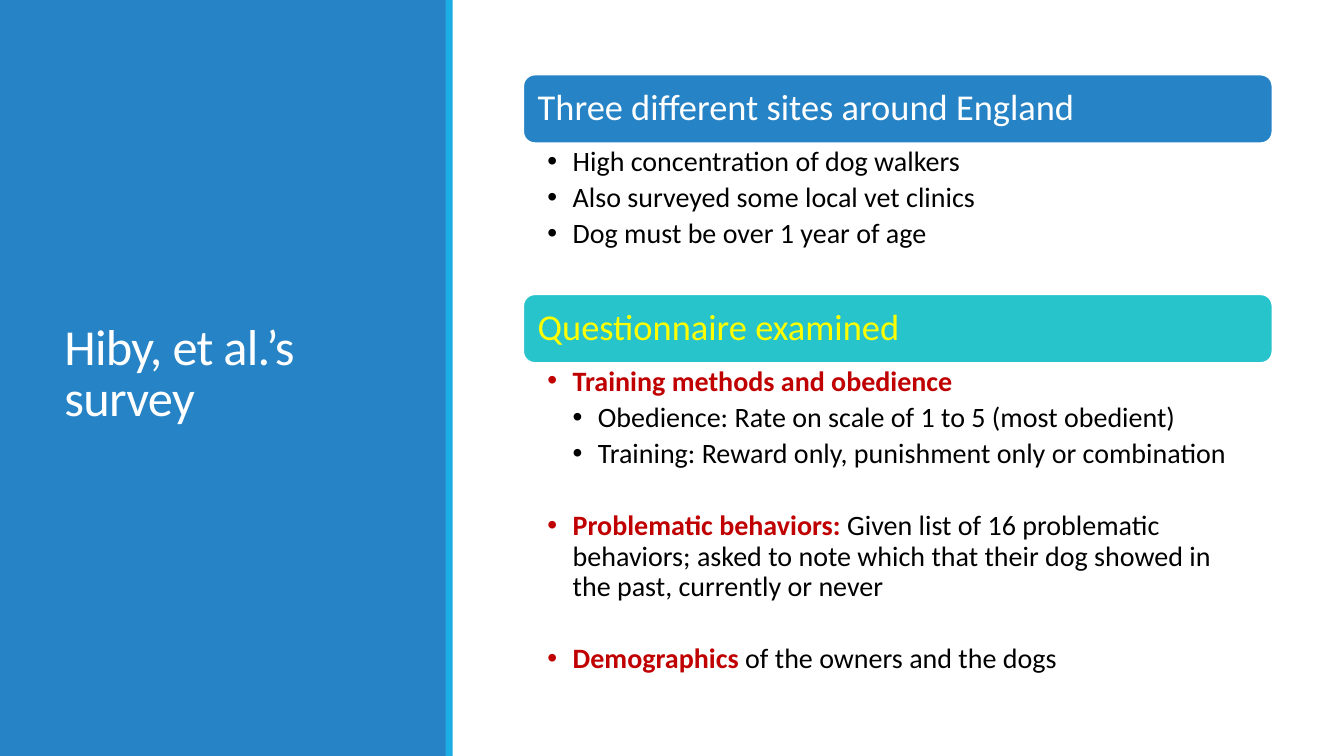
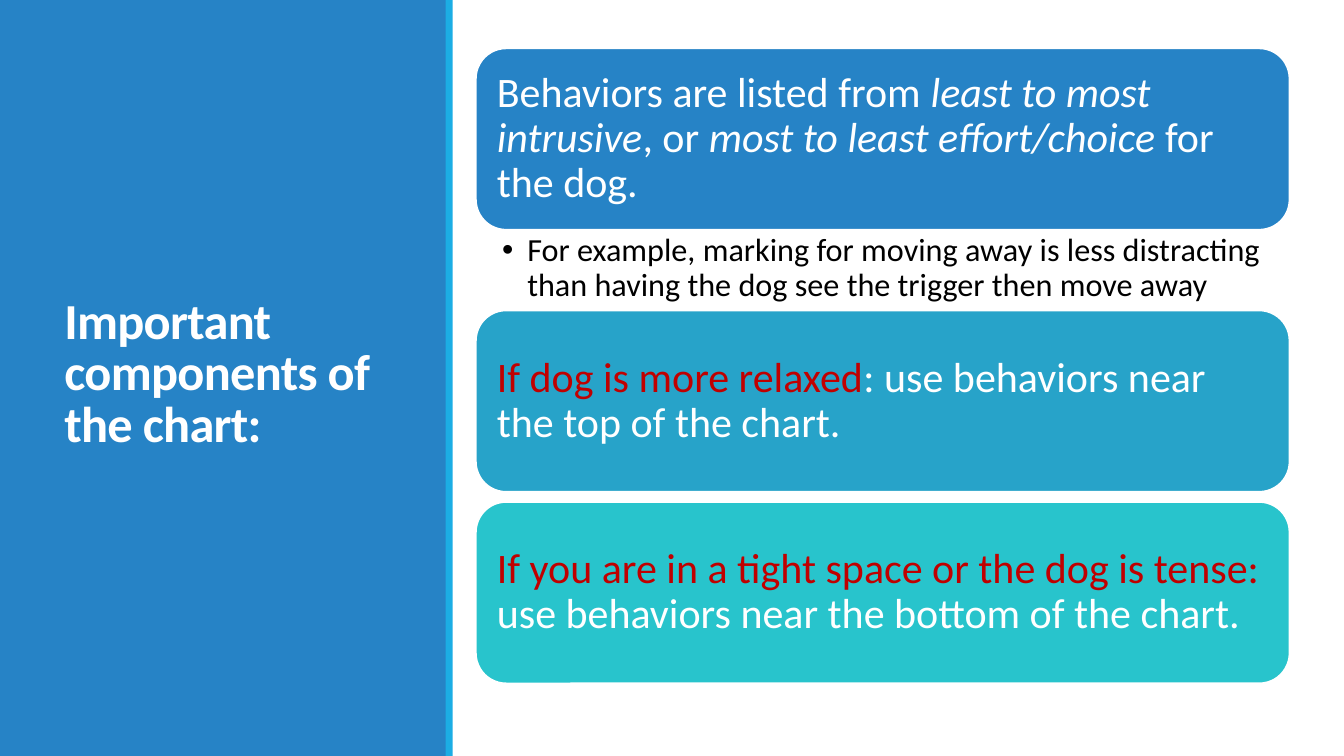
"""Build two slides with a title panel and rounded heading boxes."""
from lxml import etree
from pptx import Presentation
from pptx.dml.color import RGBColor
from pptx.enum.shapes import MSO_SHAPE
from pptx.enum.text import MSO_ANCHOR, PP_ALIGN
from pptx.oxml.ns import qn
from pptx.util import Inches, Pt

RECT = MSO_SHAPE.RECTANGLE
ROUND = MSO_SHAPE.ROUNDED_RECTANGLE
LEFT = PP_ALIGN.LEFT
TOP, MIDDLE = MSO_ANCHOR.TOP, MSO_ANCHOR.MIDDLE

COLORS = {
    "blue": "2683C6", "sky": "1CADE4", "ocean": "27A3C9", "teal": "28C4CC",
    "white": "FFFFFF", "black": "000000", "red": "C00000", "yellow": "FFFF00",
}
FONT = "Calibri"
KEY = {"color": "red", "bold": True}


def rgb(name):
    return RGBColor.from_string(COLORS[name])


def add_block(s, kind, box, fill, line=None):
    sp = s.shapes.add_shape(kind, *map(Inches, box))
    sp.shadow.inherit = False
    sp.fill.solid()
    sp.fill.fore_color.rgb = rgb(fill)
    if line:
        sp.line.color.rgb = rgb(line)
        sp.line.width = Pt(1.25)
    else:
        sp.line.fill.background()
    return sp


def set_frame(tf, anchor, insets):
    tf.word_wrap = True
    tf.vertical_anchor = anchor
    sides = ("margin_left", "margin_top", "margin_right", "margin_bottom")
    for side, inset in zip(sides, insets):
        setattr(tf, side, Inches(inset))


def write(p, runs, size, color, spacing=0.9):
    p.alignment = LEFT
    p.line_spacing = spacing
    for text, changes in runs:
        r = p.add_run()
        r.text = text
        style = {"name": FONT, "size": Pt(size), **changes}
        r.font.color.rgb = rgb(style.pop("color", color))
        for attr, value in style.items():
            setattr(r.font, attr, value)


def add_bullet(p, level):
    pPr = p._p.get_or_add_pPr()
    pPr.set("marL", str(Inches(0.25 * level)))
    pPr.set("indent", str(Inches(-0.25)))
    etree.SubElement(pPr, qn("a:buFont")).set("typeface", "Arial")
    etree.SubElement(pPr, qn("a:buChar")).set("char", "•")


def add_heading(s, box, fill, runs, size, inset, color="white"):
    tf = add_block(s, ROUND, box, fill, "white").text_frame
    set_frame(tf, MIDDLE, [inset] * 4)
    write(tf.paragraphs[0], runs, size, color)


def add_bullets(s, box, items, size, insets):
    tf = s.shapes.add_textbox(*map(Inches, box)).text_frame
    set_frame(tf, TOP, insets)
    for i, (level, gap, runs) in enumerate(items):
        p = tf.add_paragraph() if i else tf.paragraphs[0]
        write(p, runs, size, "black")
        p.space_before = Pt(gap)
        p.space_after = Pt(size * 0.215)
        add_bullet(p, level)


def add_titled_slide(prs, title, bold=False):
    s = prs.slides.add_slide(prs.slide_layouts[6])
    add_block(s, RECT, (0, 0, 4.43, 7.5), "blue")
    add_block(s, RECT, (4.42, 0, 0.07, 7.5), "sky")
    tf = s.shapes.add_textbox(*map(Inches, (0.54, 0.57, 3.37, 6.31))).text_frame
    set_frame(tf, MIDDLE, (0.1, 0.05, 0.1, 0.05))
    p = tf.paragraphs[0]
    write(p, [(title, {"bold": bold})], 36, "white", 0.85)
    p.runs[0].font._element.set("spc", "-50")
    return s


def add_survey_slide(prs):
    s = add_titled_slide(prs, "Hiby, et al.’s survey")
    sites = [
        (1, 0, [("High concentration of dog walkers", {})]),
        (1, 0, [("Also surveyed some local vet clinics", {})]),
        (1, 0, [("Dog must be over 1 year of age", {})]),
    ]
    questions = [
        (1, 0, [("Training methods and obedience", KEY)]),
        (2, 0, [("Obedience: Rate on scale of 1 to 5 (most obedient)", {})]),
        (2, 0, [("Training: Reward only, punishment only or combination", {})]),
        (1, 25.7, [("Problematic behaviors: ", KEY),
                   ("Given list of 16 problematic behaviors; asked to note which "
                    "that their dog showed in the past, currently or never", {})]),
        (1, 25.7, [("Demographics", KEY), (" of the owners and the dogs", {})]),
    ]
    sections = [
        ("Three different sites around England", "blue", "white", sites, 1.5),
        ("Questionnaire examined", "teal", "yellow", questions, 3.24),
    ]
    left, top, width, height = 5.19, 0.74, 7.43, 0.68
    for heading, fill, color, items, body in sections:
        add_heading(s, (left, top, width, height), fill, [(heading, {})], 26, 0.11, color)
        top += height
        add_bullets(s, (left, top, width, body), items, 20, (0.24, 0.04, 0.2, 0.04))
        top += body


def add_chart_advice_slide(prs):
    s = add_titled_slide(prs, "Important components of the chart:", bold=True)
    italic, red = {"italic": True}, {"color": "red"}
    left, width, height = 4.72, 8.07, 1.8
    boxes = [
        (0.48, "blue", [("Behaviors are listed from ", {}),
                        ("least to most intrusive", italic), (", or ", {}),
                        ("most to least effort/choice", italic), (" for the dog.", {})]),
        (3.08, "ocean", [("If dog is more relaxed", red),
                         (": use behaviors near the top of the chart.", {})]),
        (4.98, "teal", [("If you are in a tight space or the dog is tense:", red),
                        (" use behaviors near the bottom of the chart.", {})]),
    ]
    for top, fill, runs in boxes:
        add_heading(s, (left, top, width, height), fill, runs, 30, 0.12)
    example = ("For example, marking for moving away is less distracting than "
               "having the dog see the trigger then move away")
    add_bullets(s, (left, 2.28, width, 0.8), [(1, 0, [(example, {})])], 23,
                (0.26, 0.04, 0.23, 0.04))


def main():
    prs = Presentation()
    prs.slide_width, prs.slide_height = Inches(13.33), Inches(7.5)
    add_survey_slide(prs)
    add_chart_advice_slide(prs)
    prs.save("out.pptx")


if __name__ == "__main__":
    main()
